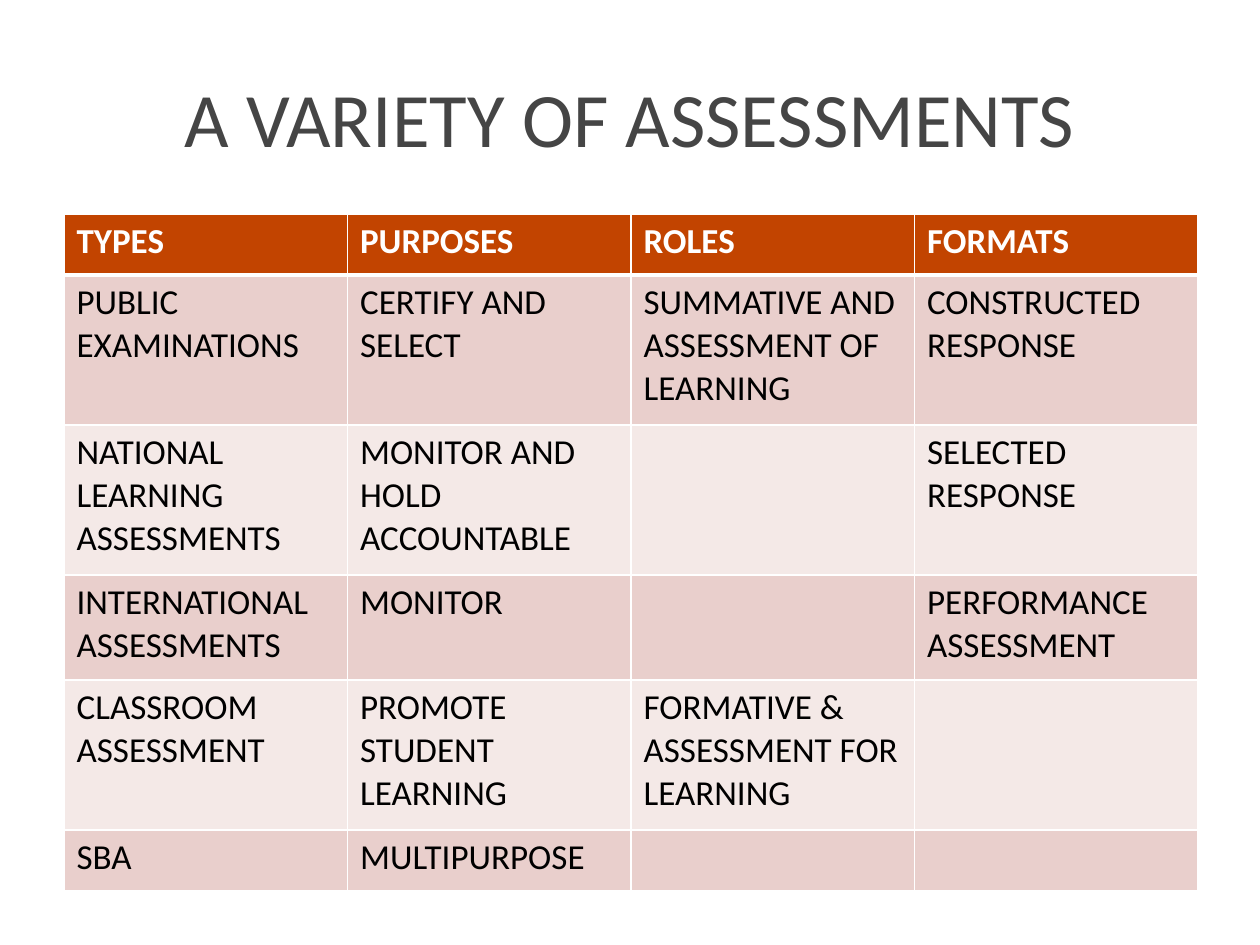
from dataclasses import dataclass

from lxml.etree import SubElement
from pptx import Presentation
from pptx.dml.color import RGBColor as Rgb
from pptx.enum.text import MSO_ANCHOR as Anchor, PP_ALIGN as Align
from pptx.oxml.ns import qn
from pptx.util import Emu, Pt


@dataclass(frozen=True)
class Theme:
    font: str = "Calibri"
    title: str = "454545"
    head: str = "C24400"
    bands: tuple = ("E9CFCC", "F4E9E7")
    ink: str = "000000"
    white: str = "FFFFFF"
    big: int = 44
    body: int = 20
    thin: int = 1
    thick: int = 3


@dataclass(frozen=True)
class Box:
    left: int
    top: int
    width: int
    height: int


@dataclass(frozen=True)
class Row:
    height: int
    texts: tuple


THEME = Theme()
TITLE = Box(63, 38, 1134, 157)
ROWS = (
    Row(61, ("TYPES", "PURPOSES", "ROLES", "FORMATS")),
    Row(150, ("PUBLIC EXAMINATIONS", "CERTIFY AND SELECT",
              "SUMMATIVE AND ASSESSMENT OF LEARNING", "CONSTRUCTED RESPONSE")),
    Row(150, ("NATIONAL LEARNING ASSESSMENTS", "MONITOR AND HOLD ACCOUNTABLE",
              "", "SELECTED RESPONSE")),
    Row(105, ("INTERNATIONAL ASSESSMENTS", "MONITOR",
              "", "PERFORMANCE ASSESSMENT")),
    Row(150, ("CLASSROOM ASSESSMENT", "PROMOTE STUDENT LEARNING",
              "FORMATIVE & ASSESSMENT FOR LEARNING", "")),
    Row(61, ("SBA", "MULTIPURPOSE", "", "")),
)
GRID = Box(64, 214, 1134, sum(row.height for row in ROWS))


def px(count: float) -> Emu:
    return Emu(round(count * 914400 / 126))


def style(para, size: int, color: str, bold: bool = False) -> None:
    # Paragraph font keeps empty cells at the same size
    for font in (para.font, *(run.font for run in para.runs)):
        font.name, font.size, font.bold = THEME.font, Pt(size), bold
        font.color.rgb = Rgb.from_string(color)


def edge(cell, widths: dict) -> None:
    props = cell._tc.get_or_add_tcPr()
    for spot, (side, width) in enumerate(widths.items()):
        line = SubElement(props, qn(f"a:ln{side}"), w=str(Pt(width)))
        fill = SubElement(line, qn("a:solidFill"))
        SubElement(fill, qn("a:srgbClr"), val=THEME.white)
        props.insert(spot, line)


def draw_title(slide, text: str, box: Box) -> None:
    title = slide.shapes.title
    title.left, title.top = px(box.left), px(box.top)
    title.width, title.height = px(box.width), px(box.height)
    frame = title.text_frame
    frame.text = text
    frame.word_wrap = True
    frame.vertical_anchor = Anchor.MIDDLE
    para = frame.paragraphs[0]
    para.alignment = Align.CENTER
    style(para, THEME.big, THEME.title)


def draw_cell(cell, text: str, level: int) -> None:
    head = level == 0
    cell.text_frame.text = text
    style(cell.text_frame.paragraphs[0], THEME.body,
          THEME.white if head else THEME.ink, head)
    cell.fill.solid()
    color = THEME.head if head else THEME.bands[(level - 1) % 2]
    cell.fill.fore_color.rgb = Rgb.from_string(color)
    edge(cell, {"L": THEME.thin, "R": THEME.thin,
                "T": THEME.thick if level == 1 else THEME.thin,
                "B": THEME.thick if head else THEME.thin})


def draw_grid(slide, rows: tuple, box: Box) -> None:
    count = len(rows[0].texts)
    table = slide.shapes.add_table(
        len(rows), count, px(box.left), px(box.top),
        px(box.width), px(box.height)).table
    for col in table.columns:
        col.width = px(box.width / count)
    for level, row in enumerate(rows):
        table.rows[level].height = px(row.height)
        for place, text in enumerate(row.texts):
            draw_cell(table.cell(level, place), text, level)


def main() -> None:
    deck = Presentation()
    deck.slide_width, deck.slide_height = px(1260), px(945)
    # Title-only layout
    slide = deck.slides.add_slide(deck.slide_layouts[5])
    draw_title(slide, "A VARIETY OF ASSESSMENTS", TITLE)
    # Assessment table
    draw_grid(slide, ROWS, GRID)
    deck.save("out.pptx")


if __name__ == "__main__":
    main()
